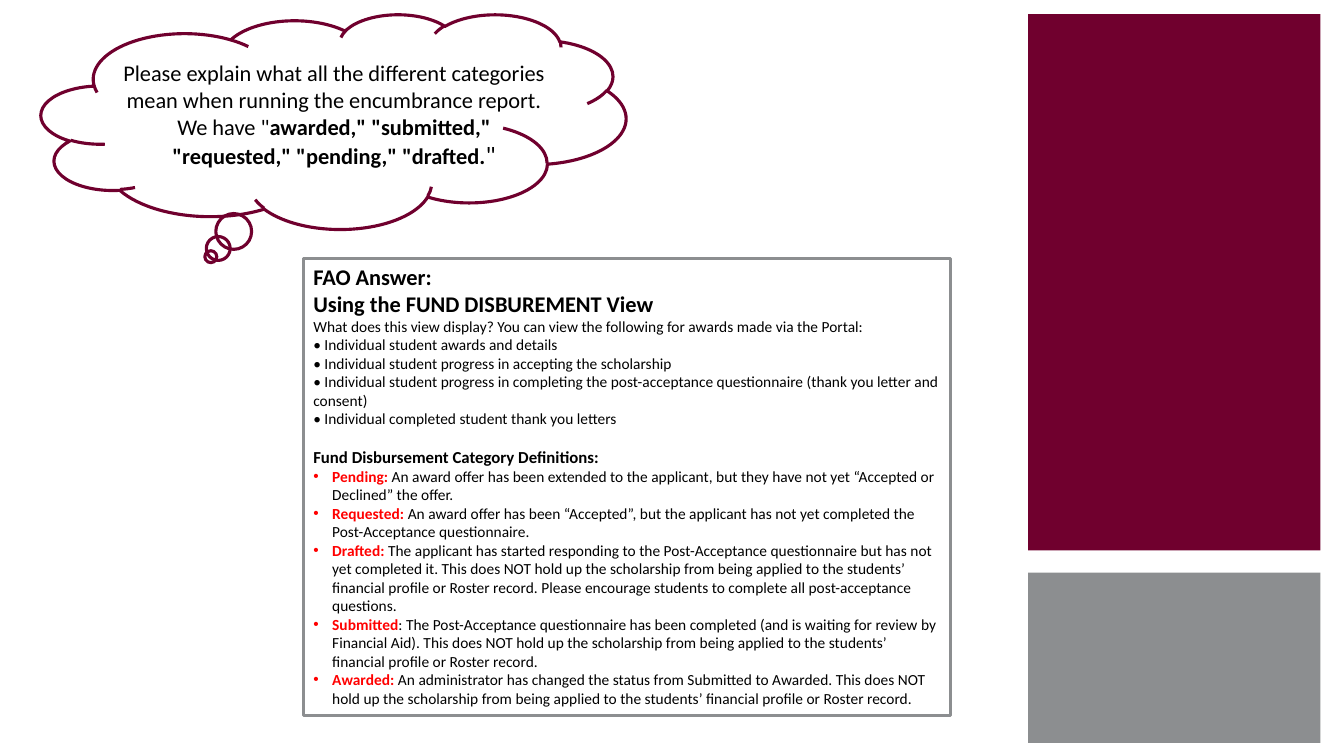
from lxml import etree
from pptx import Presentation
from pptx.dml.color import RGBColor
from pptx.enum import shapes, text
from pptx.oxml import ns
from pptx.util import Pt

MAROON, GRAY, RED, BLACK = "70002E", "8C8E90", "FF0000", "000000"
TITLE_AND_CONTENT = 1
HANGING_INDENT = Pt(13.5)

QUESTION = [
    ("Please explain what all the different categories mean when running "
     "the encumbrance report. We have \"", 16, False),
    ("awarded,\" \"submitted,\" \"requested,\" \"pending,\" \"drafted.", 16, True),
    ("\"", 18, False),
]
HEADINGS = ["FAO Answer:", "Using the FUND DISBUREMENT View"]
OVERVIEW = [
    "What does this view display? You can view the following for awards made via the Portal:",
    "• Individual student awards and details",
    "• Individual student progress in accepting the scholarship",
    "• Individual student progress in completing the post-acceptance questionnaire "
    "(thank you letter and consent)",
    "• Individual completed student thank you letters",
]
DEFINITIONS = [
    ("Pending: ", "An award offer has been extended to the applicant, but they have "
     "not yet “Accepted or Declined” the offer."),
    ("Requested:", " An award offer has been “Accepted”, but the applicant has not yet "
     "completed the Post-Acceptance questionnaire."),
    ("Drafted:", " The applicant has started responding to the Post-Acceptance "
     "questionnaire but has not yet completed it. This does NOT hold up the scholarship "
     "from being applied to the students’ financial profile or Roster record. Please "
     "encourage students to complete all post-acceptance questions."),
    ("Submitted", ": The Post-Acceptance questionnaire has been completed (and is waiting "
     "for review by Financial Aid). This does NOT hold up the scholarship from being "
     "applied to the students’ financial profile or Roster record."),
    ("Awarded: ", "An administrator has changed the status from Submitted to Awarded. "
     "This does NOT hold up the scholarship from being applied to the students’ "
     "financial profile or Roster record."),
]


def color(hex_string):
    return RGBColor.from_string(hex_string)


def place(shape, left, top, width, height):
    shape.left, shape.top = Pt(left), Pt(top)
    shape.width, shape.height = Pt(width), Pt(height)


def outline(shape, hex_string):
    shape.line.color.rgb = color(hex_string)
    shape.line.width = Pt(2.25)


def add_block(slide, left, top, width, height, fill):
    block = slide.shapes.add_shape(
        shapes.MSO_SHAPE.RECTANGLE, Pt(left), Pt(top), Pt(width), Pt(height))
    block.shadow.inherit = False
    block.fill.solid()
    block.fill.fore_color.rgb = color(fill)
    block.line.fill.background()


def add_thought_cloud(slide, left, top, width, height, tail):
    """Add an unfilled cloud; tail is its tip from the centre, in shares of the size."""
    cloud = slide.shapes.add_shape(
        shapes.MSO_SHAPE.CLOUD_CALLOUT, Pt(left), Pt(top), Pt(width), Pt(height))
    cloud.shadow.inherit = False
    cloud.fill.background()
    outline(cloud, MAROON)
    cloud.adjustments[0], cloud.adjustments[1] = tail


def prepare_frame(placeholder, anchor):
    frame = placeholder.text_frame
    frame.word_wrap = True
    frame.auto_size = text.MSO_AUTO_SIZE.NONE
    frame.vertical_anchor = anchor
    return frame


def add_run(paragraph, words, size, bold=False, hex_string=BLACK):
    run = paragraph.add_run()
    run.text = words
    run.font.name = "Calibri"
    run.font.size = Pt(size)
    run.font.bold = bold
    run.font.color.rgb = color(hex_string)


def set_bullet(paragraph, character=None):
    """Give the paragraph a hanging bullet, or clear the inherited one."""
    properties = paragraph._p.get_or_add_pPr()
    indent = HANGING_INDENT if character else 0
    properties.set("marL", str(indent))
    properties.set("indent", str(-indent))
    if character:
        font = etree.SubElement(properties, ns.qn("a:buFont"))
        font.set("typeface", "Arial")
        bullet = etree.SubElement(properties, ns.qn("a:buChar"))
        bullet.set("char", character)
    else:
        etree.SubElement(properties, ns.qn("a:buNone"))


def write_question(title):
    place(title, 79.92, 38.5, 317.52, 87.12)
    frame = prepare_frame(title, text.MSO_ANCHOR.TOP)
    paragraph = frame.paragraphs[0]
    paragraph.alignment = text.PP_ALIGN.CENTER
    for words, size, bold in QUESTION:
        add_run(paragraph, words, size, bold)


def write_answer(body):
    place(body, 216.6, 184.4, 462.2, 327)
    outline(body, GRAY)
    frame = prepare_frame(body, text.MSO_ANCHOR.TOP)
    lines = [[(words, 16, True)] for words in HEADINGS]
    lines += [[(words, 11)] for words in OVERVIEW]
    subheading = len(lines)
    lines.append([("Fund Disbursement Category Definitions:", 12, True)])
    lines += [[(term, 11, True, RED), (meaning, 11)] for term, meaning in DEFINITIONS]
    for index, runs in enumerate(lines):
        paragraph = frame.add_paragraph() if index else frame.paragraphs[0]
        paragraph.space_before = Pt(13.4 if index == subheading else 0)
        set_bullet(paragraph, "•" if index > subheading else None)
        for run in runs:
            add_run(paragraph, *run)


def main():
    presentation = Presentation()
    presentation.slide_width, presentation.slide_height = Pt(960), Pt(540)
    layout = presentation.slide_layouts[TITLE_AND_CONTENT]
    slide = presentation.slides.add_slide(layout)
    add_block(slide, 734.4, 10.08, 208.8, 383.04, MAROON)
    add_block(slide, 734.4, 408.96, 208.8, 121.68, GRAY)
    add_thought_cloud(slide, 29.52, 10.08, 417.6, 153.36, tail=(-0.21, 0.63))
    write_question(slide.shapes.title)
    write_answer(slide.placeholders[1])
    presentation.save("out.pptx")


if __name__ == "__main__":
    main()
